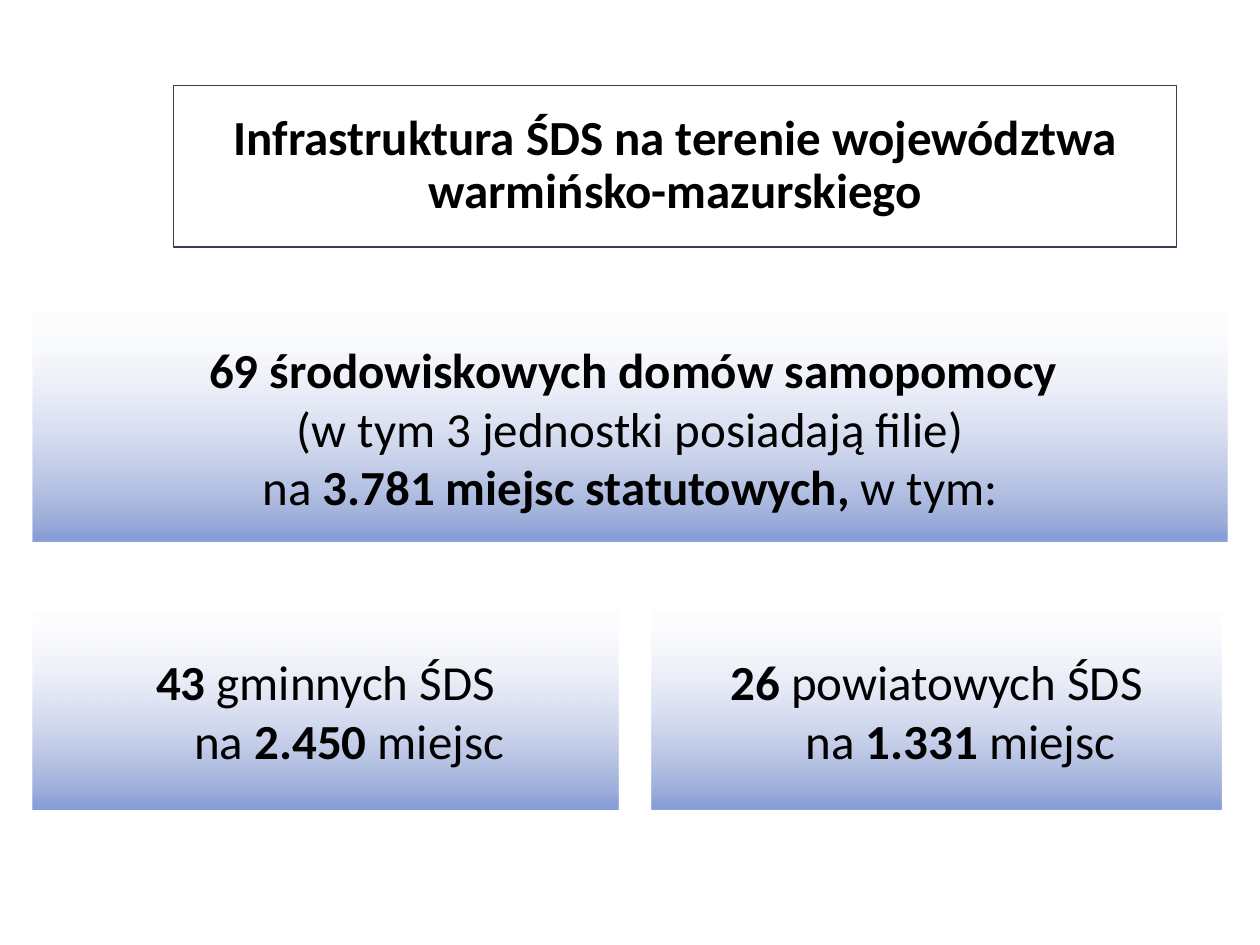
from pptx import Presentation
from pptx.dml.color import RGBColor
from pptx.enum.shapes import MSO_SHAPE
from pptx.enum.text import MSO_ANCHOR, MSO_AUTO_SIZE, PP_ALIGN
from pptx.oxml import parse_xml
from pptx.oxml.ns import nsdecls, qn
from pptx.util import Cm, Pt

RECTANGLE = MSO_SHAPE.RECTANGLE
MIDDLE = MSO_ANCHOR.MIDDLE
NO_AUTOFIT = MSO_AUTO_SIZE.NONE
CENTER = PP_ALIGN.CENTER

COLORS = {
    "text": "000000",
    "border": "333F50",
    "light": "F9FAFD",
    "medium": "9AABD9",
    "dark": "889ED7",
}
GRADIENT = [(4, "light", 30), (92, "medium", 100), (97, "dark", 100)]


class SlideBuilder:
    font_name = "Calibri"
    font_size = Pt(28)
    inset = Cm(0.2)

    def __init__(self, slide):
        self.slide = slide

    def format_run(self, run, bold):
        run.font.name = self.font_name
        run.font.size = self.font_size
        run.font.bold = bold
        run.font.color.rgb = RGBColor.from_string(COLORS["text"])

    def title(self, text, left, top, width, height):
        shape = self.slide.shapes.title
        shape.left, shape.top = Cm(left), Cm(top)
        shape.width, shape.height = Cm(width), Cm(height)
        shape.line.color.rgb = RGBColor.from_string(COLORS["border"])
        shape.line.width = Pt(0.75)
        text_frame = shape.text_frame
        text_frame.text = text
        text_frame.word_wrap = True
        text_frame.auto_size = NO_AUTOFIT
        text_frame.vertical_anchor = MIDDLE
        paragraph = text_frame.paragraphs[0]
        paragraph.alignment = CENTER
        paragraph.line_spacing = 0.9
        self.format_run(paragraph.runs[0], True)

    def gradient(self, shape):
        shape.fill.gradient()
        shape.fill.gradient_angle = 270
        stops = shape.element.spPr.find(qn("a:gradFill")).find(qn("a:gsLst"))
        for stop in list(stops):
            stops.remove(stop)
        for position, color, opacity in GRADIENT:
            stops.append(parse_xml(
                f'<a:gs {nsdecls("a")} pos="{position * 1000}">'
                f'<a:srgbClr val="{COLORS[color]}">'
                f'<a:alpha val="{opacity * 1000}"/></a:srgbClr></a:gs>'
            ))

    def panel(self, left, top, width, height):
        shape = self.slide.shapes.add_shape(
            RECTANGLE, Cm(left), Cm(top), Cm(width), Cm(height))
        shape.shadow.inherit = False
        shape.line.fill.background()
        self.gradient(shape)
        text_frame = shape.text_frame
        text_frame.word_wrap = True
        text_frame.vertical_anchor = MIDDLE
        text_frame.margin_left = text_frame.margin_right = self.inset
        text_frame.margin_top = text_frame.margin_bottom = self.inset
        return text_frame

    def lines(self, paragraph, lines, margin=0, indent=0):
        paragraph.alignment = CENTER
        properties = paragraph._p.get_or_add_pPr()
        properties.set("marL", str(Cm(margin)))
        properties.set("indent", str(Cm(indent)))
        for number, segments in enumerate(lines):
            if number:
                paragraph.add_line_break()
            for text, bold in segments:
                run = paragraph.add_run()
                run.text = text
                self.format_run(run, bold)

    def summary(self, heading, lines, left, top, width, height):
        text_frame = self.panel(left, top, width, height)
        self.lines(text_frame.paragraphs[0], [[(heading, True)]], margin=0.12)
        self.lines(text_frame.add_paragraph(), lines)

    def count(self, homes, kind, places, left, top, width, height):
        paragraph = self.panel(left, top, width, height).paragraphs[0]
        paragraph.space_before = Pt(5.6)
        self.lines(paragraph, [
            [(f"{homes} ", True), (f"{kind} ŚDS", False)],
            [("na", False), (f" {places} ", True), ("miejsc", False)],
        ], margin=0.96, indent=-0.96)


def main():
    presentation = Presentation()
    presentation.slide_width = Cm(25.4)
    presentation.slide_height = Cm(19.05)
    slide = presentation.slides.add_slide(presentation.slide_layouts[5])
    builder = SlideBuilder(slide)

    builder.title(
        "Infrastruktura ŚDS na terenie województwa warmińsko-mazurskiego",
        3.5, 1.73, 20.22, 3.25)
    builder.summary(
        "69 środowiskowych domów samopomocy",
        [
            [("(w tym 3 jednostki posiadają filie)", False)],
            [("na", False), (" 3.781 miejsc statutowych, ", True),
             ("w tym:", False)],
        ],
        0.65, 6.32, 24.1, 4.6)
    builder.count("26", "powiatowych", "1.331", 13.13, 12.32, 11.5, 4)
    builder.count("43", "gminnych", "2.450", 0.65, 12.32, 11.82, 4)

    presentation.save("out.pptx")


if __name__ == "__main__":
    main()
